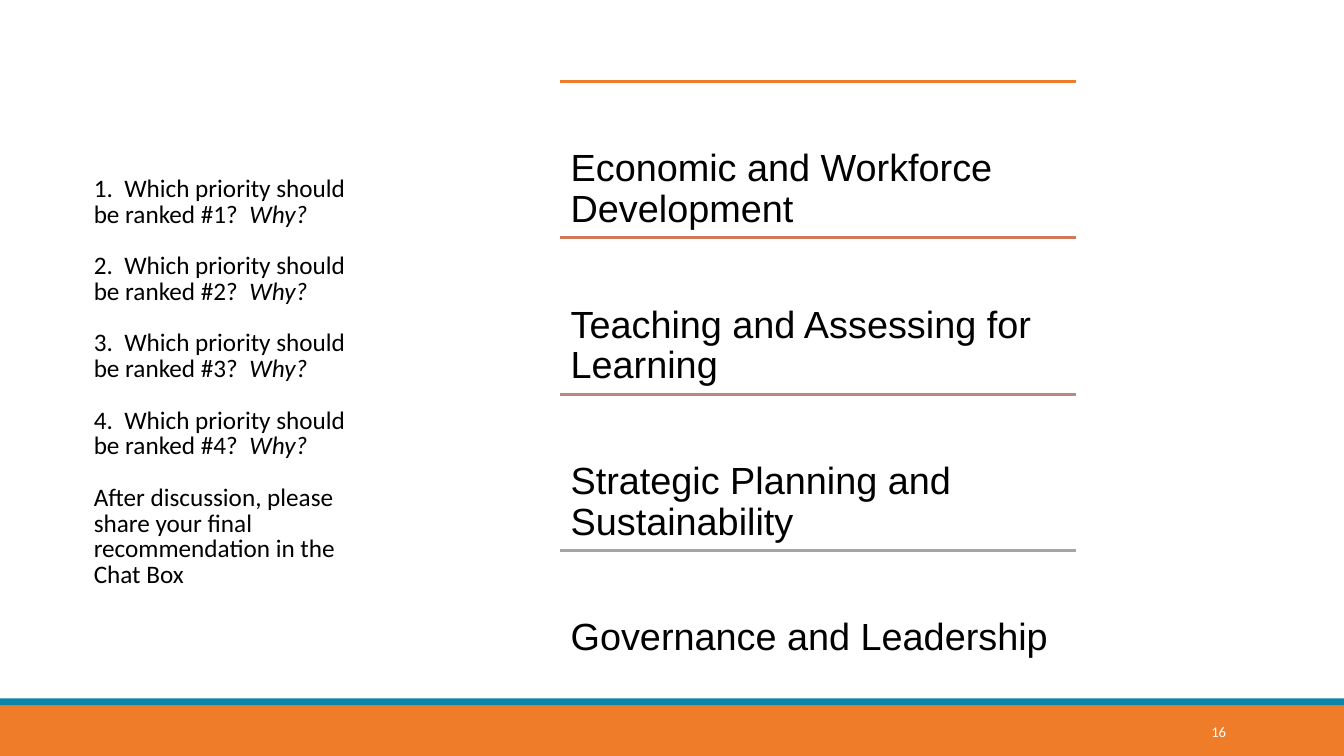
import pptx
import pptx.util
import pptx.dml.color
import pptx.enum.shapes
import pptx.enum.text
import pptx.oxml.ns
from lxml import etree

Inches, Pt = pptx.util.Inches, pptx.util.Pt
ALIGN, ANCHOR = pptx.enum.text.PP_ALIGN, pptx.enum.text.MSO_ANCHOR

QUESTION = "{0}.  Which priority should be ranked #{0}?  "
CLOSING = "After discussion, please share your final recommendation in the Chat Box"
PRIORITIES = [
    ("Economic and Workforce Development", "EE7C29"),
    ("Teaching and Assessing for Learning", "D17957"),
    ("Strategic Planning and Sustainability", "B98881"),
    ("Governance and Leadership", "A5A5A5"),
]
LIST_LEFT, LIST_TOP, LIST_WIDTH, ROW_HEIGHT = 5.55, 0.81, 5.12, 1.55


def rgb(color):
    return pptx.dml.color.RGBColor.from_string(color)


def add_run(p, text, size=18, font="Calibri", color="000000", italic=False):
    r = p.add_run()
    r.text = text
    r.font.size, r.font.name = Pt(size), font
    r.font.color.rgb, r.font.italic = rgb(color), italic


def format_paragraph(p, align=ALIGN.LEFT, spacing=1.0, after=0):
    p.alignment, p.line_spacing = align, spacing
    p.space_before, p.space_after = Pt(0), Pt(after)


def set_frame(tf, anchor, side=0.1, top=0.05, bottom=0.05):
    tf.word_wrap, tf.vertical_anchor = True, anchor
    tf.auto_size = pptx.enum.text.MSO_AUTO_SIZE.NONE
    tf.margin_left = tf.margin_right = Inches(side)
    tf.margin_top, tf.margin_bottom = Inches(top), Inches(bottom)


def add_box(s, left, top, width, height):
    return s.shapes.add_textbox(
        Inches(left), Inches(top), Inches(width), Inches(height)).text_frame


def add_band(s, top, height, color):
    sp = s.shapes.add_shape(pptx.enum.shapes.MSO_SHAPE.RECTANGLE, 0,
                            Inches(top), Inches(13.33), Inches(height))
    sp.shadow.inherit = False
    sp.fill.solid()
    sp.fill.fore_color.rgb = rgb(color)
    sp.line.fill.background()


def add_rule(s, y, color):
    """Draw the horizontal line above a priority."""
    line = s.shapes.add_connector(
        pptx.enum.shapes.MSO_CONNECTOR.STRAIGHT, Inches(LIST_LEFT), Inches(y),
        Inches(LIST_LEFT + LIST_WIDTH), Inches(y))
    line.line.color.rgb, line.line.width = rgb(color), Pt(2)
    etree.SubElement(line._element.spPr, pptx.oxml.ns.qn("a:effectLst"))


def add_priority(s, top, text, color):
    add_rule(s, top, color)
    tf = add_box(s, LIST_LEFT, top, LIST_WIDTH, ROW_HEIGHT)
    set_frame(tf, ANCHOR.TOP, side=0.11, top=0.67, bottom=0)
    p = tf.paragraphs[0]
    format_paragraph(p, spacing=0.9)
    add_run(p, text, size=27, font="Arial")


def fill_questions(title):
    title.left, title.top = Inches(0.83), Inches(1.4)
    title.width, title.height = Inches(2.93), Inches(4.49)
    tf = title.text_frame
    set_frame(tf, ANCHOR.BOTTOM)
    p = tf.paragraphs[0]
    for number in range(1, 5):
        format_paragraph(p, spacing=0.85, after=18.4)
        add_run(p, QUESTION.format(number))
        add_run(p, "Why?", italic=True)
        p = tf.add_paragraph()
    format_paragraph(p, spacing=0.85)
    add_run(p, CLOSING)


def add_page_number(s, number):
    tf = add_box(s, 10.83, 7.06, 1.43, 0.4)
    set_frame(tf, ANCHOR.MIDDLE)
    p = tf.paragraphs[0]
    format_paragraph(p, align=ALIGN.RIGHT)
    add_run(p, number, size=10.5, color="FFFFFF")


def main():
    prs = pptx.Presentation()
    prs.slide_width, prs.slide_height = Inches(13.33), Inches(7.5)
    s = prs.slides.add_slide(prs.slide_layouts[5])
    add_band(s, 7, 0.5, "EE7C29")
    add_band(s, 6.93, 0.07, "0D85AB")
    add_page_number(s, "16")
    fill_questions(s.shapes.title)
    for i, (text, color) in enumerate(PRIORITIES):
        add_priority(s, LIST_TOP + i * ROW_HEIGHT, text, color)
    prs.save("out.pptx")


if __name__ == "__main__":
    main()
